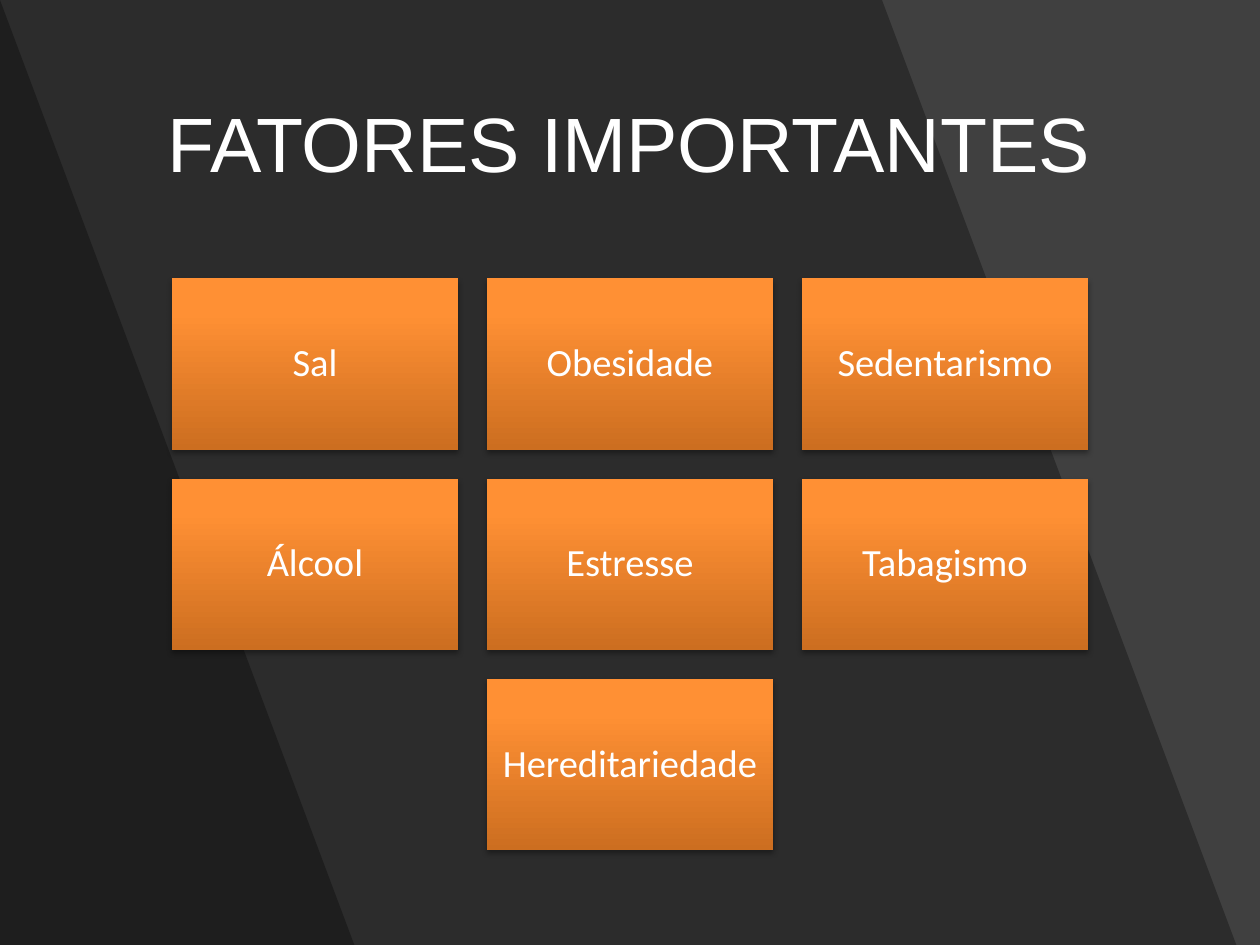
from pptx import Presentation
from pptx.dml.color import RGBColor
from pptx.enum.shapes import MSO_SHAPE
from pptx.enum.text import MSO_ANCHOR, PP_ALIGN
from pptx.oxml import parse_xml
from pptx.oxml.ns import nsdecls, qn
from pptx.util import Inches, Pt

RECT = MSO_SHAPE.RECTANGLE
MIDDLE = MSO_ANCHOR.MIDDLE
CENTER = PP_ALIGN.CENTER

WIDE, HIGH = 10, 7.5
BOX_W, BOX_H, GAP, TOP = 2.27, 1.36, 0.23, 2.21
SLANT = 2.61

COLORS = {
    "back": "404040",
    "shade": "000000",
    "text": "FFFFFF",
    "low": "CC6E20",
    "mid": "FF9034",
    "high": "FF9136",
}
STOPS = [(0, "low"), (80, "mid"), (100, "high")]
FONTS = {
    "title": {"name": "Arial", "size": Pt(44)},
    "box": {"name": "Calibri", "size": Pt(22)},
}
FRAME = {"word_wrap": True, "vertical_anchor": MIDDLE}
INSETS = {
    "margin_left": Inches(0.09),
    "margin_right": Inches(0.09),
    "margin_top": Inches(0.09),
    "margin_bottom": Inches(0.09),
}
ROWS = [
    ["Sal", "Obesidade", "Sedentarismo"],
    ["Álcool", "Estresse", "Tabagismo"],
    ["Hereditariedade"],
]


def apply(item, values):
    for name, value in values.items():
        setattr(item, name, value)


class Deck:
    def __init__(self):
        self.prs = Presentation()
        self.prs.slide_width = Inches(WIDE)
        self.prs.slide_height = Inches(HIGH)
        self.slide = self.prs.slides.add_slide(self.prs.slide_layouts[5])
        self.shapes = self.slide.shapes
        self.paint(self.slide.background.fill, "back")

    def paint(self, fill, color):
        fill.solid()
        fill.fore_color.rgb = RGBColor.from_string(COLORS[color])

    def label(self, shape, text, style, spacing=1.0):
        frame = shape.text_frame
        frame.text = text
        apply(frame, FRAME)
        para = frame.paragraphs[0]
        apply(para, {"alignment": CENTER, "line_spacing": spacing})
        font = para.runs[0].font
        apply(font, FONTS[style])
        font.color.rgb = RGBColor.from_string(COLORS["text"])

    def band(self, width):
        pen = self.shapes.build_freeform(0, 0, scale=Inches(1))
        pen.add_line_segments([(width, 0), (width + SLANT, HIGH), (0, HIGH)])
        shape = pen.convert_to_shape()
        self.paint(shape.fill, "shade")
        shape.line.fill.background()
        shape.shadow.inherit = False
        tint = shape._element.spPr.find(".//" + qn("a:srgbClr"))
        tint.append(parse_xml(f'<a:alpha {nsdecls("a")} val="30000"/>'))

    def title(self, text, left, top, width, height):
        shape = self.shapes.title
        apply(shape, {
            "left": Inches(left), "top": Inches(top),
            "width": Inches(width), "height": Inches(height),
        })
        self.label(shape, text, "title")
        self.shapes._spTree.append(shape._element)

    def box(self, text, left, top):
        shape = self.shapes.add_shape(
            RECT, Inches(left), Inches(top), Inches(BOX_W), Inches(BOX_H))
        shape.line.fill.background()
        props = shape._element.spPr
        stops = "".join(
            f'<a:gs pos="{pos * 1000}"><a:srgbClr val="{COLORS[color]}"/></a:gs>'
            for pos, color in STOPS)
        props.insert(2, parse_xml(
            f'<a:gradFill {nsdecls("a")} rotWithShape="1"><a:gsLst>{stops}</a:gsLst>'
            '<a:lin ang="16200000" scaled="0"/></a:gradFill>'))
        props.append(parse_xml(
            f'<a:effectLst {nsdecls("a")}><a:outerShdw blurRad="{Pt(3.1)}" '
            f'dist="{Pt(1.8)}" dir="5400000" rotWithShape="0">'
            f'<a:srgbClr val="{COLORS["shade"]}"><a:alpha val="35000"/></a:srgbClr>'
            '</a:outerShdw></a:effectLst>'))
        self.label(shape, text, "box", 0.9)
        apply(shape.text_frame, INSETS)

    def grid(self, rows):
        for row, names in enumerate(rows):
            span = len(names) * (BOX_W + GAP) - GAP
            for col, name in enumerate(names):
                left = (WIDE - span) / 2 + col * (BOX_W + GAP)
                self.box(name, left, TOP + row * (BOX_H + GAP))


def main():
    deck = Deck()
    for width in (7.06, 0.33):
        deck.band(width)
    deck.title("FATORES IMPORTANTES", 0.68, 0.4, 8.63, 1.45)
    deck.grid(ROWS)
    deck.prs.save("out.pptx")


if __name__ == "__main__":
    main()
